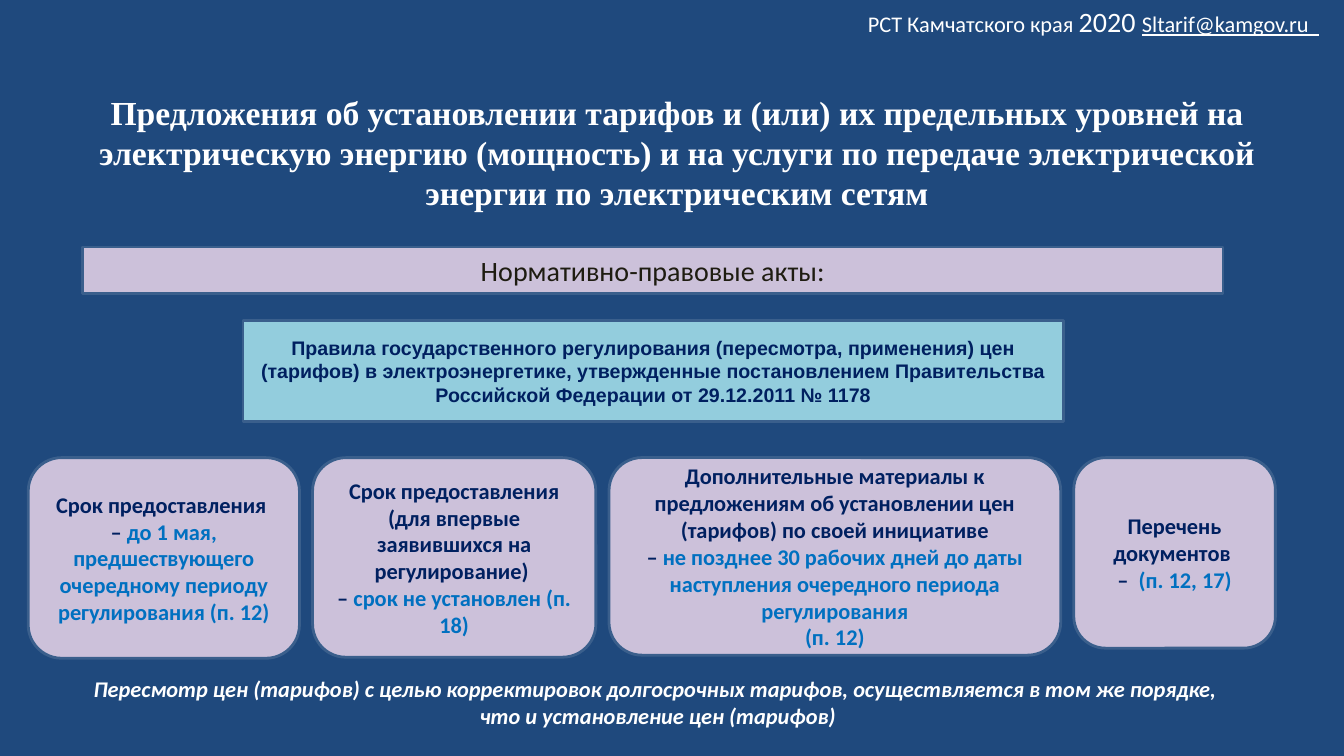
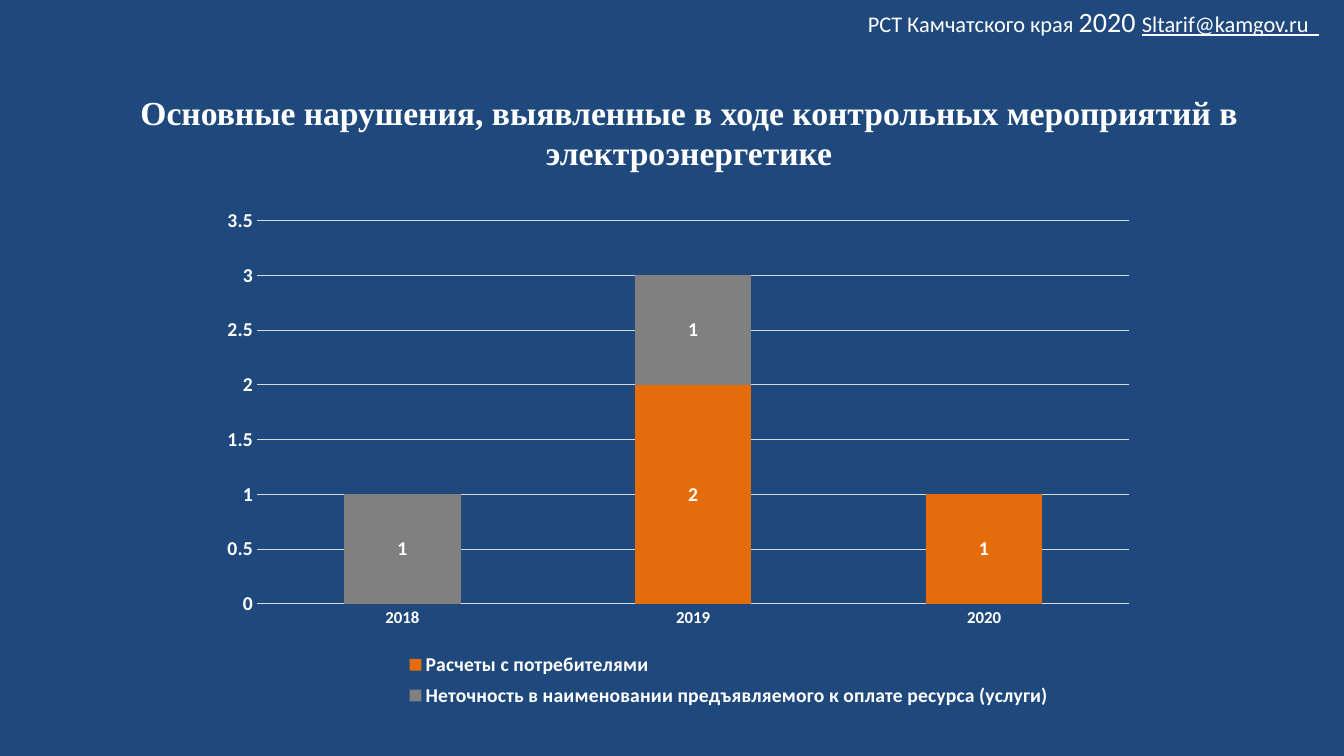
from pptx import Presentation
from pptx.chart.data import CategoryChartData
from pptx.dml.color import RGBColor
from pptx.enum.chart import XL_CHART_TYPE, XL_LABEL_POSITION, XL_LEGEND_POSITION, XL_TICK_MARK
from pptx.enum.shapes import MSO_SHAPE
from pptx.enum.text import MSO_ANCHOR, MSO_AUTO_SIZE, PP_ALIGN
from pptx.oxml import parse_xml
from pptx.oxml.ns import nsdecls
from pptx.util import Inches, Pt

COLORS = {
    "navy": "1F497D", "white": "FFFFFF", "lilac": "CCC1DA", "aqua": "93CDDD",
    "border": "3A5F8C", "dark": "002060", "accent": "0070C0", "ink": "1E1C11",
    "orange": "E46C0A", "gray": "808080", "grid": "D9D9D9",
}
RGB = {name: RGBColor.from_string(value) for name, value in COLORS.items()}


def style(font, size=16, color="white", name="Calibri", bold=False, italic=False, underline=False):
    font.size, font.name = Pt(size), name
    font.bold, font.italic, font.underline = bold, italic, underline
    font.color.rgb = RGB[color]


def write(tf, paras, align=PP_ALIGN.CENTER, **fmt):
    """Fill a text frame; each paragraph is a list of (text, overrides of fmt)."""
    tf.word_wrap = True
    tf.auto_size = MSO_AUTO_SIZE.NONE
    for i, runs in enumerate(paras):
        p = tf.paragraphs[0] if i == 0 else tf.add_paragraph()
        p.alignment = align
        for text, own in runs:
            r = p.add_run()
            r.text = text
            style(r.font, **{**fmt, **own})


prs = Presentation()
prs.slide_width, prs.slide_height = Inches(13.33), Inches(7.5)
bg = prs.slide_master.background.fill
bg.solid()
bg.fore_color.rgb = RGB["navy"]

# Slides with their shared title and header
titles = [
    ("Предложения об установлении тарифов и (или) их предельных уровней на "
     "электрическую энергию (мощность) и на услуги по передаче электрической "
     "энергии по электрическим сетям", (0.51, 0.91, 12.41, 1.21)),
    ("Основные нарушения, выявленные в ходе контрольных мероприятий в "
     "электроэнергетике", (1.23, 0.91, 11.21, 0.81)),
]
slides = []
for text, box in titles:
    s = prs.slides.add_slide(prs.slide_layouts[5])
    title = s.shapes.title
    title.left, title.top, title.width, title.height = map(Inches, box)
    title.fill.solid()
    title.fill.fore_color.rgb = RGB["navy"]
    tf = title.text_frame
    tf.margin_left = tf.margin_top = tf.margin_right = tf.margin_bottom = 0
    tf.vertical_anchor = MSO_ANCHOR.TOP
    write(tf, [[(text, {})]], size=24, name="Times New Roman", bold=True)
    header = s.shapes.add_textbox(Inches(5.42), 0, Inches(7.76), Inches(0.44))
    write(header.text_frame, [[
        ("РСТ Камчатского края ", {}),
        ("2020 ", {"size": 20}),
        ("Sltarif@kamgov.ru  ", {"underline": True}),
    ]], align=PP_ALIGN.RIGHT)
    slides.append(s)

# Slide 1: legal acts and deadlines
s = slides[0]
accent = {"color": "accent"}
process, rounded = MSO_SHAPE.FLOWCHART_PROCESS, MSO_SHAPE.ROUNDED_RECTANGLE
boxes = [
    (process, (0.82, 2.45, 11.31, 0.46), "lilac",
     [[("Нормативно-правовые акты:", {})]], {"size": 20, "color": "ink"}),
    (process, (2.41, 3.18, 8.14, 1), "aqua",
     [[("Правила государственного регулирования (пересмотра, применения) цен "
        "(тарифов) в электроэнергетике, утвержденные постановлением Правительства "
        "Российской Федерации от 29.12.2011 № 1178", {})]],
     {"size": 14, "name": "Arial", "color": "dark", "bold": True}),
]
cards = [
    (2.69, 1.99, [
        [("Срок предоставления ", {})],
        [("– ", {}), ("до 1 мая, предшествующего очередному периоду регулирования (п. 12)", accent)],
    ]),
    (2.81, 1.98, [
        [("Срок предоставления (для впервые заявившихся на регулирование) ", {})],
        [("– ", {}), ("срок не установлен (п. 18)", accent)],
    ]),
    (4.48, 1.96, [
        [("Дополнительные материалы к предложениям об установлении цен (тарифов) "
          "по своей инициативе", {})],
        [("– ", {}), ("не позднее 30 рабочих дней до даты наступления очередного "
                      "периода регулирования", accent)],
        [("(п. 12)", accent)],
    ]),
    (2, 1.89, [
        [("Перечень документов ", {})],
        [("–  ", {}), ("(п. 12, 17)", accent)],
    ]),
]
left, gap = 0.28, 0.13
for width, height, paras in cards:
    boxes.append((rounded, (left, 4.54, width, height), "lilac", paras,
                  {"color": "dark", "bold": True}))
    left += width + gap

for kind, box, fill, paras, fmt in boxes:
    sp = s.shapes.add_shape(kind, *map(Inches, box))
    sp.shadow.inherit = False
    sp.fill.solid()
    sp.fill.fore_color.rgb = RGB[fill]
    sp.line.color.rgb = RGB["border"]
    sp.line.width = Pt(2)
    sp.text_frame.vertical_anchor = MSO_ANCHOR.MIDDLE
    write(sp.text_frame, paras, **fmt)

note = s.shapes.add_textbox(Inches(0.62), Inches(6.65), Inches(11.81), Inches(0.67))
write(note.text_frame, [
    [("Пересмотр цен (тарифов) с целью корректировок долгосрочных тарифов, "
      "осуществляется в том же порядке, ", {})],
    [("что и установление цен (тарифов)", {})],
], bold=True, italic=True)

# Slide 2: violations by year
s = slides[1]
data = CategoryChartData()
data.categories = ["2018", "2019", "2020"]
data.add_series("Расчеты с потребителями", (None, 2, 1))
data.add_series("Неточность в наименовании предъявляемого к оплате ресурса (услуги)", (1, 1, None))
chart = s.shapes.add_chart(XL_CHART_TYPE.COLUMN_STACKED, Inches(2.04), Inches(1.98),
                           Inches(10.18), Inches(5.21), data).chart
chart.has_title = False
style(chart.font, size=14, bold=True)

chart.has_legend = True
chart.legend.position = XL_LEGEND_POSITION.BOTTOM
chart.legend.include_in_layout = False
style(chart.legend.font, size=14, bold=True)

for axis, size in ((chart.category_axis, 12), (chart.value_axis, 14)):
    axis.major_tick_mark = axis.minor_tick_mark = XL_TICK_MARK.NONE
    style(axis.tick_labels.font, size=size, bold=True)
chart.value_axis.format.line.fill.background()
chart.value_axis.has_major_gridlines = True
for line in (chart.category_axis.format.line, chart.value_axis.major_gridlines.format.line):
    line.color.rgb = RGB["grid"]
    line.width = Pt(0.75)

plot = chart.plots[0]
plot.gap_width, plot.overlap = 150, 100
plot.vary_by_categories = False
for series, color in zip(plot.series, ("orange", "gray")):
    series.format.fill.solid()
    series.format.fill.fore_color.rgb = RGB[color]
    labels = series.data_labels
    labels.show_value = True
    labels.position = XL_LABEL_POSITION.CENTER
    style(labels.font, size=14, bold=True)

# Fixed plot and legend areas, as fractions of the chart
layouts = [
    (plot._element.getparent(), 0, '<c:layoutTarget val="inner"/>', (0.05, 0.04, 0.85, 0.73)),
    (chart.legend._element, 1, "", (0.19, 0.85, 0.64, 0.13)),
]
for area, index, target, box in layouts:
    for old in area.findall("{*}layout"):
        area.remove(old)
    sizes = "".join(f'<c:{tag} val="{val}"/>' for tag, val in zip("xywh", box))
    area.insert(index, parse_xml(
        f'<c:layout {nsdecls("c")}><c:manualLayout>{target}<c:xMode val="edge"/>'
        f'<c:yMode val="edge"/>{sizes}</c:manualLayout></c:layout>'))

prs.save("out.pptx")
